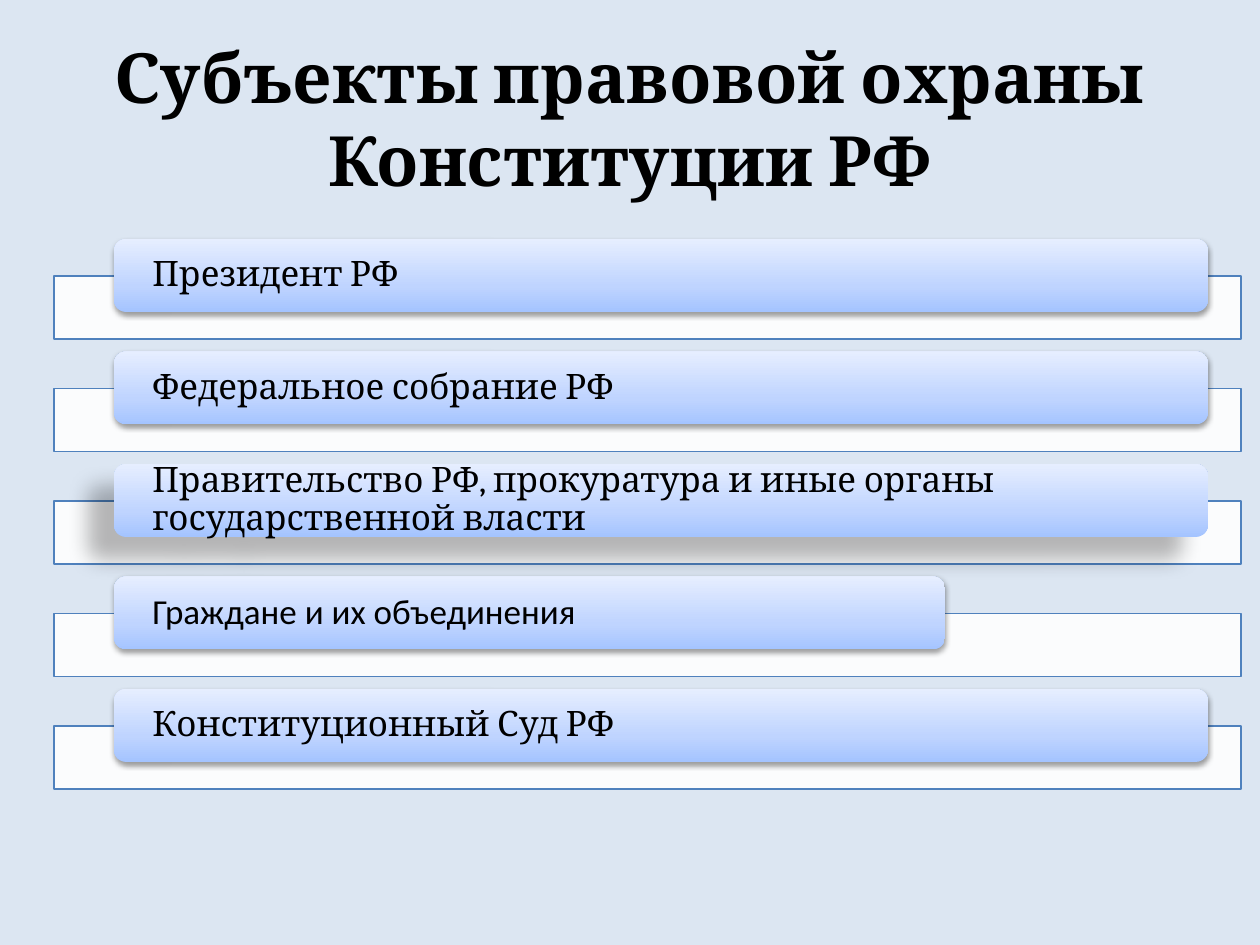
from copy import deepcopy

from lxml.etree import SubElement
from pptx import Presentation
from pptx.dml.color import RGBColor
from pptx.enum.shapes import MSO_SHAPE
from pptx.enum.text import MSO_ANCHOR, PP_ALIGN
from pptx.oxml.ns import qn
from pptx.util import Pt

PX = 914400 / 126
SLIDE_W, SLIDE_H = 1260, 945
ROW_H = 100
BAR_H = 73
GRADIENT = ((0, "A4C4FF"), (0.35, "BFD4FF"), (1, "E6EEFF"))
SOFT_SHADOW = {"alpha": 38, "blur": 3.1, "dist": 1.6, "dir": 90}
DEEP_SHADOW = {"alpha": 28, "blur": 11.8, "dist": 19.7, "dir": 141}
SUBJECTS = (
    ("Президент РФ", "Cambria", 1094, SOFT_SHADOW),
    ("Федеральное собрание РФ", "Cambria", 1094, SOFT_SHADOW),
    ("Правительство РФ, прокуратура и иные органы государственной власти",
     "Cambria", 1094, DEEP_SHADOW),
    ("Граждане и их объединения", "Calibri", 831, SOFT_SHADOW),
    ("Конституционный Суд РФ", "Cambria", 1094, SOFT_SHADOW),
)


def px(length):
    """Turn pixels into EMU."""
    return round(length * PX)


def paint(color_format, hex_color):
    """Set a colour from a hex string."""
    color_format.rgb = RGBColor.from_string(hex_color)


def apply(target, values):
    """Set every attribute named in a dict of format values."""
    for name, value in values.items():
        setattr(target, name, value)


def write(frame, words, frame_format, paragraph_format, font_format):
    """Put one black paragraph into a text frame."""
    apply(frame, {"word_wrap": True, "vertical_anchor": MSO_ANCHOR.MIDDLE, **frame_format})
    paragraph = frame.paragraphs[0]
    apply(paragraph, paragraph_format)
    run = paragraph.add_run()
    run.text = words
    apply(run.font, font_format)
    paint(run.font.color, "000000")


def add_block(slide, kind, left, top, width, height):
    """Add a preset shape without a shadow."""
    block = slide.shapes.add_shape(kind, px(left), px(top), px(width), px(height))
    block.shadow.inherit = False
    block.fill.solid()
    return block


def shade(bar):
    """Fill a bar with the three-stop gradient, darkest at the bottom."""
    bar.fill.gradient()
    bar.fill.gradient_angle = 90
    stop_list = bar._element.spPr.find(".//" + qn("a:gsLst"))
    stop_list.append(deepcopy(stop_list[0]))
    for stop, (position, hex_color) in zip(bar.fill.gradient_stops, GRADIENT):
        stop.position = position
        paint(stop.color, hex_color)


def cast_shadow(bar, shadow):
    """Give a bar an outer shadow."""
    effects = bar._element.spPr.find(qn("a:effectLst"))
    outer = SubElement(effects, qn("a:outerShdw"), {
        "blurRad": str(Pt(shadow["blur"])),
        "dist": str(Pt(shadow["dist"])),
        "dir": str(shadow["dir"] * 60000),
        "rotWithShape": "0",
    })
    black = SubElement(outer, qn("a:srgbClr"), val="000000")
    SubElement(black, qn("a:alpha"), val=str(shadow["alpha"] * 1000))


def add_title(slide, left, top, width, height):
    """Place the heading in its box."""
    title = slide.shapes.add_textbox(px(left), px(top), px(width), px(height))
    write(title.text_frame, "Субъекты правовой охраны Конституции РФ", {},
          {"alignment": PP_ALIGN.CENTER},
          {"name": "Cambria", "size": Pt(39.6), "bold": True})


def add_subject(slide, left, top, width, subject):
    """Place one row: a white strip with a gradient bar over its upper edge."""
    words, font_name, bar_width, shadow = subject
    strip = add_block(slide, MSO_SHAPE.RECTANGLE, left, top + 37, width, ROW_H - 37)
    paint(strip.fill.fore_color, "FFFFFF")
    white = strip._element.spPr.find(".//" + qn("a:srgbClr"))
    SubElement(white, qn("a:alpha"), val="90000")
    paint(strip.line.color, "4F81BD")
    strip.line.width = Pt(0.75)

    bar = add_block(slide, MSO_SHAPE.ROUNDED_RECTANGLE, left + 60, top, bar_width, BAR_H)
    shade(bar)
    bar.line.fill.background()
    cast_shadow(bar, shadow)
    write(bar.text_frame, words,
          {"margin_left": px(35), "margin_right": px(35), "margin_top": 0, "margin_bottom": 0},
          {"alignment": PP_ALIGN.LEFT, "line_spacing": 0.9},
          {"name": font_name, "size": Pt(20)})


def add_subjects(slide, left, top, width, height):
    """Spread the rows evenly over the box."""
    pitch = (height - ROW_H) / (len(SUBJECTS) - 1)
    for index, subject in enumerate(SUBJECTS):
        add_subject(slide, left, top + index * pitch, width, subject)


def main():
    """Build and save the slide."""
    deck = Presentation()
    apply(deck, {"slide_width": px(SLIDE_W), "slide_height": px(SLIDE_H)})
    slide = deck.slides.add_slide(deck.slide_layouts[6])
    slide.background.fill.solid()
    paint(slide.background.fill.fore_color, "DCE6F2")
    add_title(slide, 63, 38, 1134, 158)
    add_subjects(slide, 54, 239, 1187, 550)
    deck.save("out.pptx")


if __name__ == "__main__":
    main()
